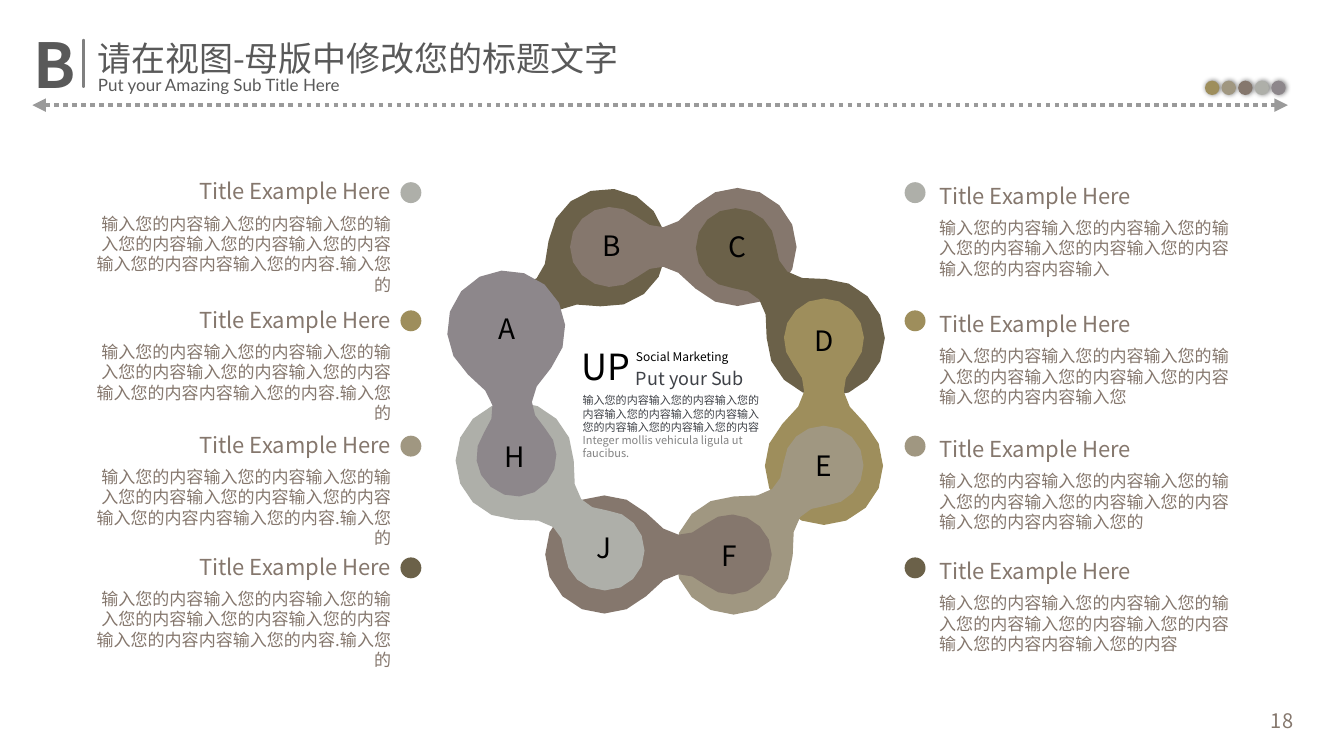
import math
import pptx
import pptx.util
import pptx.dml.color
import pptx.enum.dml
import pptx.enum.shapes
import pptx.enum.text
import pptx.oxml
import pptx.oxml.ns

Inches = pptx.util.Inches
RGBColor = pptx.dml.color.RGBColor
KIND = pptx.enum.shapes.MSO_SHAPE
LEFT = pptx.enum.text.PP_ALIGN.LEFT
MID = pptx.enum.text.PP_ALIGN.CENTER
RIGHT = pptx.enum.text.PP_ALIGN.RIGHT
NOTO, LATO = "Noto Sans CJK SC", "Lato"

GOLD = RGBColor(0x9E, 0x8E, 0x5C)
SAND = RGBColor(0xA0, 0x97, 0x81)
BROWN = RGBColor(0x85, 0x77, 0x6D)
SILVER = RGBColor(0xAE, 0xAF, 0xA9)
MAUVE = RGBColor(0x8D, 0x87, 0x8B)
OLIVE = RGBColor(0x6B, 0x61, 0x49)
DARK = RGBColor(0x59, 0x59, 0x59)
GREY = RGBColor(0x80, 0x80, 0x80)
RULE = RGBColor(0x9A, 0x9A, 0x9A)
SLATE = RGBColor(0x3E, 0x41, 0x47)
PALE = RGBColor(0x83, 0x83, 0x83)
BLACK = RGBColor(0, 0, 0)

HEAD = "Title Example Here"
BODY = "输入您的内容输入您的内容输入您的输入您的内容输入您的内容输入您的内容输入您的内容内容输入"
LONG = BODY + "您的内容.输入您的"
ROWS = [
    (2.53, SILVER, ""),
    (4.31, GOLD, "您"),
    (6.05, SAND, "您的"),
    (7.74, OLIVE, "您的内容"),
]
DOTS = [GOLD, SAND, BROWN, SILVER, MAUVE]
LINKS = [
    (7.05, 4.53, -38.3, OLIVE),
    (8.48, 3.43, 0, BROWN),
    (10.22, 3.45, 45, OLIVE),
    (11.44, 4.71, 90, GOLD),
    (11.43, 6.47, 135, SAND),
    (10.15, 7.7, 180, BROWN),
    (8.39, 7.64, 225, SILVER),
    (7.17, 6.33, 265.4, MAUVE),
]
START = (-0.4, -0.39)
CURVES = [
    ((-0.62, -0.18), (-0.62, 0.18), (-0.4, 0.39)),
    ((-0.19, 0.6), (0.14, 0.61), (0.36, 0.42)),
    ((0.6, 0.22), (0.83, 0.18), (1.18, 0.58)),
    ((1.5, 0.9), (2.02, 0.9), (2.34, 0.58)),
    ((2.66, 0.26), (2.66, -0.26), (2.34, -0.58)),
    ((2.02, -0.9), (1.5, -0.9), (1.18, -0.58)),
    ((0.83, -0.18), (0.6, -0.22), (0.36, -0.42)),
    ((0.14, -0.61), (-0.19, -0.6), START),
]
MARKS = [
    ("A", 7.04, 4.55), ("B", 8.49, 3.4), ("C", 10.24, 3.42), ("D", 11.44, 4.72),
    ("E", 11.43, 6.46), ("F", 10.12, 7.7), ("J", 8.38, 7.6), ("H", 7.15, 6.33),
]
STEPS = 4

deck = pptx.Presentation()
deck.slide_width, deck.slide_height = Inches(18.66), Inches(10.47)
shapes = deck.slides.add_slide(deck.slide_layouts[6]).shapes


def add_xml(home, tag, inner="", **attrs):
    pairs = " ".join(f'{key}="{val}"' for key, val in attrs.items())
    space = pptx.oxml.ns.nsdecls("a")
    home.append(pptx.oxml.parse_xml(f"<a:{tag} {space} {pairs}>{inner}</a:{tag}>"))


def style(run, size, color, face=NOTO, bold=False):
    run.font.size = pptx.util.Pt(size)
    run.font.color.rgb = color
    run.font.bold = bold
    run.font.name = face
    add_xml(run.font._element, "ea", typeface=face)


def add_text(box, text, size, color, align=LEFT, face=NOTO, bold=False, wrap=True, middle=False):
    frame = shapes.add_textbox(*map(Inches, box)).text_frame
    frame.margin_left = frame.margin_right = frame.margin_top = frame.margin_bottom = 0
    frame.word_wrap = wrap
    if middle:
        frame.vertical_anchor = pptx.enum.text.MSO_ANCHOR.MIDDLE
    para = frame.paragraphs[0]
    para.text = text
    para.alignment = align
    para.line_spacing = pptx.util.Pt(round(size * 1.2, 1))
    style(para.runs[0], size, color, face, bold)
    return para


def paint(shape, color):
    shape.fill.solid()
    shape.fill.fore_color.rgb = color
    shape.line.fill.background()
    shape.shadow.inherit = False
    return shape


def add_mark(kind, box, color):
    return paint(shapes.add_shape(kind, *map(Inches, box)), color)


def add_pill(box, color):
    add_mark(KIND.ROUNDED_RECTANGLE, box, color).adjustments[0] = 0.5


def trace():
    spots, here = [START], START
    for one, two, end in CURVES:
        for step in range(1, STEPS + 1):
            t = step / STEPS
            u = 1 - t
            spots.append(tuple(
                u**3 * a + 3 * u * u * t * b + 3 * u * t * t * c + t**3 * d
                for a, b, c, d in zip(here, one, two, end)
            ))
        here = end
    return spots[:-1]


def add_link(x, y, angle, color):
    cos, sin = math.cos(math.radians(angle)), math.sin(math.radians(angle))
    spots = [
        (Inches(x + a * cos - b * sin), Inches(y + a * sin + b * cos))
        for a, b in trace()
    ]
    pen = shapes.build_freeform(*spots[0], scale=1.0)
    pen.add_line_segments(spots[1:], close=True)
    paint(pen.convert_to_shape(), color)


rule = shapes.add_connector(
    pptx.enum.shapes.MSO_CONNECTOR.STRAIGHT,
    Inches(0.45), Inches(1.46), Inches(17.88), Inches(1.46),
)
rule.line.color.rgb = RULE
rule.line.width = pptx.util.Pt(4.5)
rule.line.dash_style = pptx.enum.dml.MSO_LINE.ROUND_DOT
for tag in ("headEnd", "tailEnd"):
    add_xml(rule.line._ln, tag, type="triangle")
add_xml(rule._element.spPr, "effectLst")

add_text((1.35, 0.52, 8.26, 0.57), "请在视图-母版中修改您的标题文字", 34, DARK)
add_text((1.36, 1.03, 3.75, 0.29), "Put your Amazing Sub Title Here", 17, DARK, face=LATO)
add_text((0.41, 0.32, 0.7, 1.14), "B", 62, DARK, MID, bold=True, wrap=False, middle=True)
add_pill((1.14, 0.54, 0.04, 0.68), GREY)

SHADE = '<a:outerShdw blurRad="63500" dist="12700" dir="0"><a:srgbClr val="000000"><a:alpha val="50000"/></a:srgbClr></a:outerShdw>'
for i, color in enumerate(DOTS):
    dot = add_mark(KIND.OVAL, (16.73 + i * 0.23, 1.12, 0.2, 0.2), color)
    props = dot._element.spPr
    props.remove(props.find(pptx.oxml.ns.qn("a:effectLst")))
    add_xml(props, "effectLst", SHADE)

for top, color, tail in ROWS:
    for dot, left, shift, align, text in (
        (12.56, 13.04, 0, LEFT, BODY + tail),
        (5.56, 1.2, -0.06, RIGHT, LONG),
    ):
        add_pill((dot, top, 0.29, 0.29), color)
        add_text((left, top + shift, 4.23, 0.38), HEAD, 22, BROWN, align)
        add_text((left, top + shift + 0.49, 4.23, 1.14), text, 17, BROWN, align)

for link in LINKS:
    add_link(*link)
for mark, x, y in MARKS:
    add_text((x - 0.3, y - 0.27, 0.6, 0.55), mark, 28, BLACK, MID, middle=True)

add_text((7.97, 4.68, 0.88, 0.8), "UP", 36, BLACK, MID, middle=True)
add_text((8.83, 4.85, 1.87, 0.41), "Social Marketing", 12, BLACK)
add_text((8.83, 5.1, 1.78, 0.38), "Put your Sub", 18, SLATE)
note = add_text((8.09, 5.47, 2.56, 1.12), "输入您的内容" * 8, 11, SLATE)
more = note.add_run()
more.text = "Integer mollis vehicula ligula ut faucibus."
style(more, 11, PALE)
add_text((17.5, 9.84, 0.6, 0.5), "18", 20, BROWN, MID)

deck.save("out.pptx")
